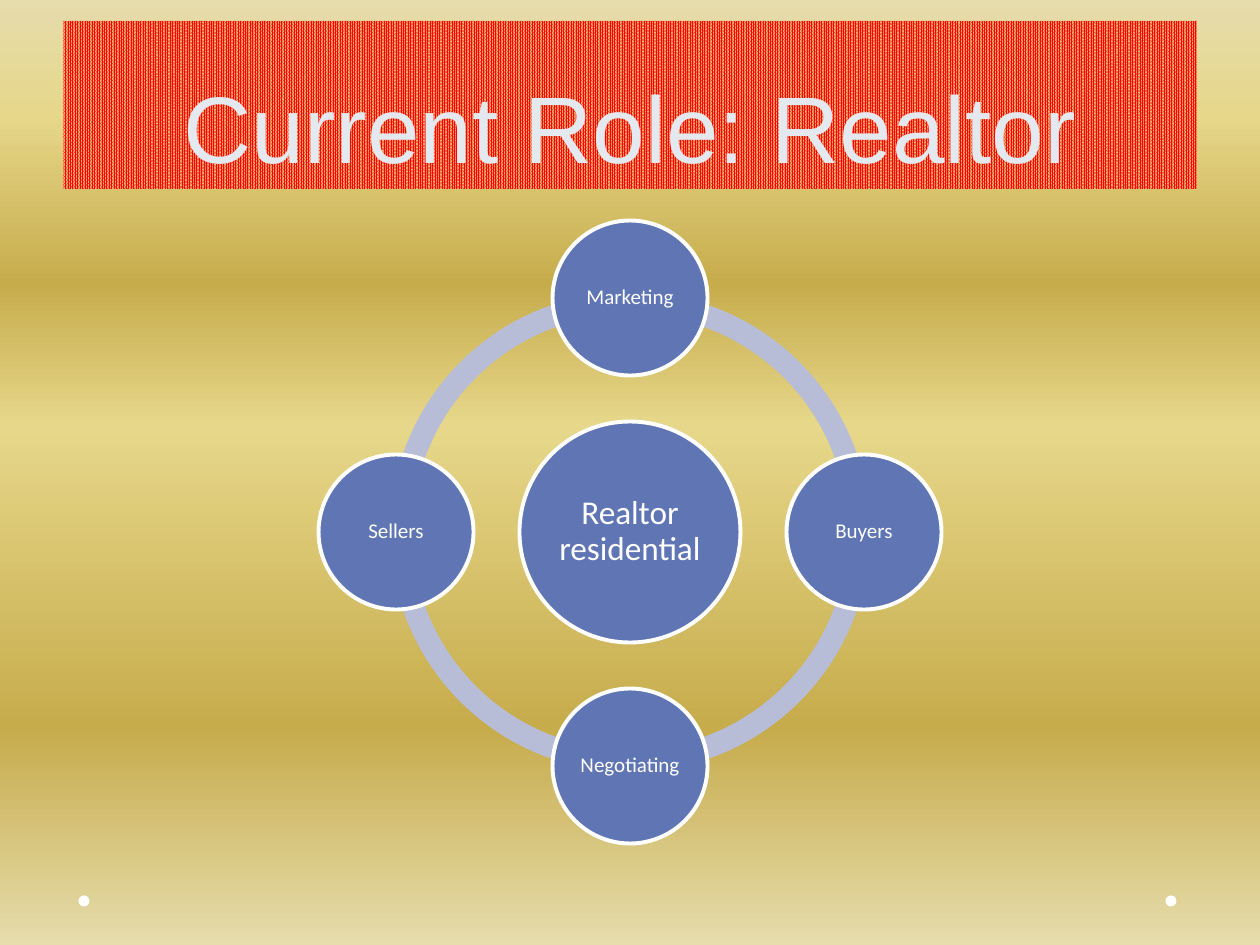
from lxml import etree
from pptx import Presentation
from pptx import util as u
from pptx.dml.color import RGBColor
from pptx.enum import dml, shapes, text
from pptx.oxml.ns import qn

TITLE = "Current Role: Realtor"
HUB = "Realtor residential"
# name, direction from the hub
NODES = [("Marketing", (0, -1)), ("Buyers", (1, 0)),
         ("Negotiating", (0, 1)), ("Sellers", (-1, 0))]
STOPS = [(0, "E6DCAC"), (12, "E6D78A"), (30, "C7AC4C"),
         (45, "E6D78A"), (77, "C7AC4C"), (100, "E6DCAC")]
ARCS = [(108, 162), (54, 108), (0, 54), (162, 0)]
DOTS = [84, 1171]
WHITE, BLUE, RING = "FFFFFF", "6076B4", "B7BDD6"
MID = (630, 532)
ORBIT = 234


def px(n):
    return u.Emu(round(n * 914400 / 126))


def rgb(code):
    return RGBColor.from_string(code)


def write(frame, words, size, font, color, space, anchor):
    frame.text = words
    frame.word_wrap = True
    frame.vertical_anchor = anchor
    para = frame.paragraphs[0]
    para.alignment = text.PP_ALIGN.CENTER
    para.line_spacing = space
    face = para.runs[0].font
    for key, value in {"size": u.Pt(size), "name": font}.items():
        setattr(face, key, value)
    face.color.rgb = rgb(color)


def put(slide, kind, x, y, size, color):
    """Add a borderless square-bounded shape centred on x, y."""
    shape = slide.shapes.add_shape(
        kind, px(x - size / 2), px(y - size / 2), px(size), px(size))
    shape.shadow.inherit = False
    shape.fill.solid()
    shape.fill.fore_color.rgb = rgb(color)
    shape.line.fill.background()
    return shape


def disc(slide, words, x, y, size, points, inset):
    shape = put(slide, shapes.MSO_SHAPE.OVAL, x, y, size, BLUE)
    shape.line.color.rgb = rgb(WHITE)
    shape.line.width = u.Pt(2.25)
    frame = shape.text_frame
    for side in ("left", "top", "right", "bottom"):
        setattr(frame, "margin_" + side, px(inset))
    write(frame, words, points, "Calibri", WHITE, 0.9,
          text.MSO_ANCHOR.MIDDLE)


def paint(slide):
    """Fill the background with the vertical gold gradient."""
    fill = slide.background.fill
    fill.gradient()
    fill.gradient_angle = 270
    stops = next(slide.element.iter(qn("a:gsLst")))
    for old in list(stops):
        stops.remove(old)
    for place, color in STOPS:
        stop = etree.SubElement(stops, qn("a:gs"), pos=str(place * 1000))
        etree.SubElement(stop, qn("a:srgbClr"), val=color)


def head(slide):
    title = slide.shapes.title
    box = {"left": 63, "top": 21, "width": 1134, "height": 168}
    for key, value in box.items():
        setattr(title, key, px(value))
    title.fill.patterned()
    title.fill.pattern = dml.MSO_PATTERN.PERCENT_90
    title.fill.fore_color.rgb = rgb("FF0000")
    title.fill.back_color.rgb = rgb("F0B57A")
    write(title.text_frame, TITLE, 54, "Arial", "E4E9EF", u.Pt(58),
          text.MSO_ANCHOR.BOTTOM)


def main():
    deck = Presentation()
    deck.slide_width, deck.slide_height = px(1260), px(945)
    slide = deck.slides.add_slide(deck.slide_layouts[5])
    paint(slide)
    head(slide)
    for x in DOTS:
        put(slide, shapes.MSO_SHAPE.OVAL, x, 901, 11, WHITE)
    for start, end in ARCS:
        arc = put(slide, shapes.MSO_SHAPE.BLOCK_ARC, *MID, 480, RING)
        for i, value in enumerate((start, end, 0.046)):
            arc.adjustments[i] = value
    disc(slide, HUB, *MID, 221, 19, 4)
    for name, (dx, dy) in NODES:
        disc(slide, name, MID[0] + dx * ORBIT, MID[1] + dy * ORBIT,
             155, 12, 2)
    deck.save("out.pptx")


if __name__ == "__main__":
    main()
